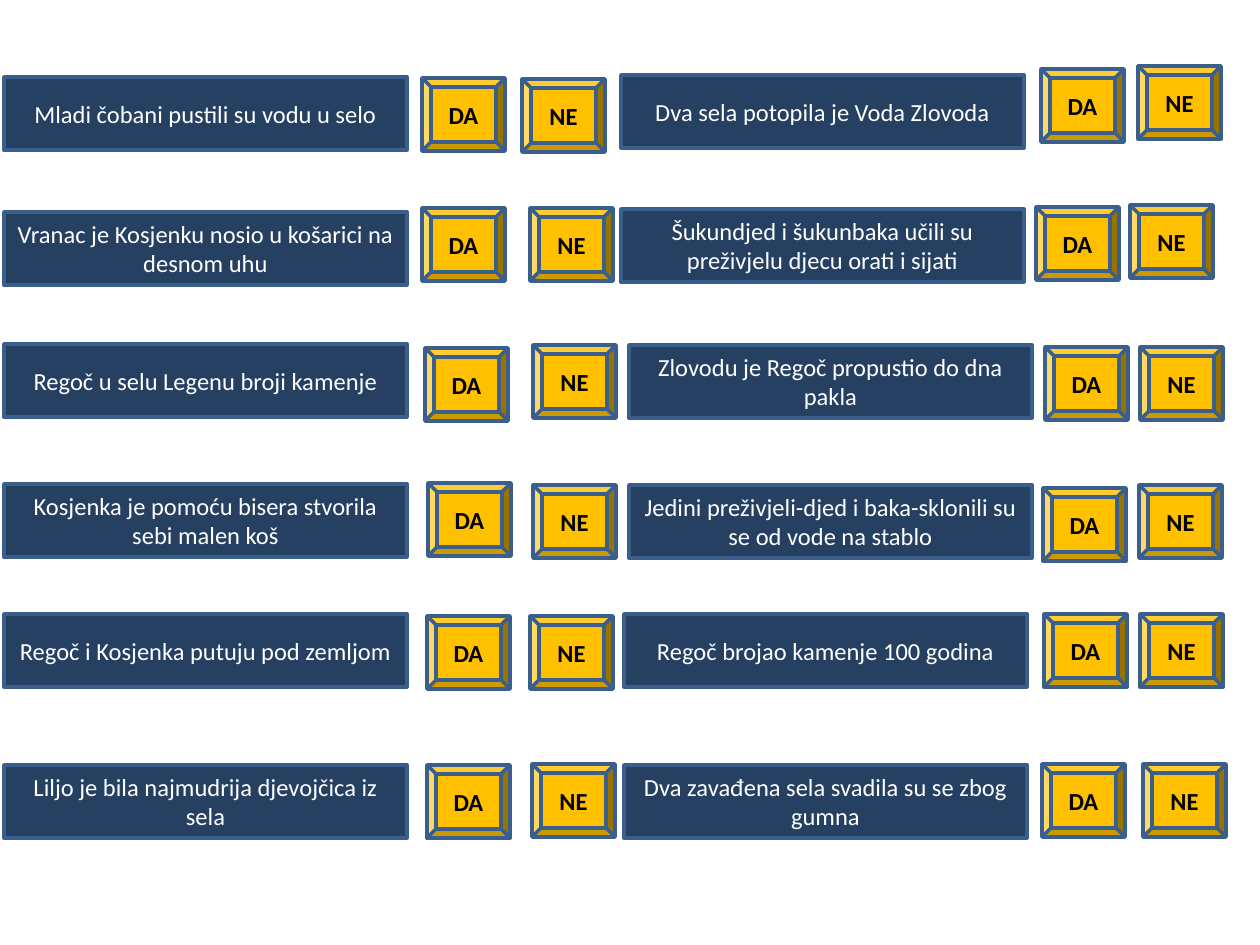
from pptx import Presentation
from pptx.dml.color import RGBColor
from pptx.enum.shapes import MSO_SHAPE
from pptx.enum.text import MSO_ANCHOR, PP_ALIGN
from pptx.util import Pt

RECTANGLE, BEVEL = MSO_SHAPE.RECTANGLE, MSO_SHAPE.BEVEL
MIDDLE, CENTER = MSO_ANCHOR.MIDDLE, PP_ALIGN.CENTER
SCALE = 914400 / 126
STATEMENT_WIDTH, BUTTON_WIDTH, HEIGHT = 403, 83, 73
NAVY, GOLD, OUTLINE, WHITE, BLACK = "254061", "FFC000", "3A5F8C", "FFFFFF", "000000"

# Each entry: left, top, statement, offset of DA, offset of NE.
STATEMENTS = [
    (4, 77, "Mladi čobani pustili su vodu u selo", (418, 1), (518, 2)),
    (4, 212, "Vranac je Kosjenku nosio u košarici na desnom uhu", (418, -4), (526, -4)),
    (4, 344, "Regoč u selu Legenu broji kamenje", (421, 4), (529, 1)),
    (4, 484, "Kosjenka je pomoću bisera stvorila sebi malen koš", (424, -1), (529, 1)),
    (4, 614, "Regoč i Kosjenka putuju pod zemljom", (423, 2), (526, 2)),
    (4, 765, "Liljo je bila najmudrija djevojčica iz sela", (423, 0), (528, -1)),
    (621, 75, "Dva sela potopila je Voda Zlovoda", (420, -6), (517, -9)),
    (621, 209, "Šukundjed i šukunbaka učili su preživjelu djecu orati i sijati",
     (415, -2), (509, -4)),
    (629, 345, "Zlovodu je Regoč propustio do dna pakla", (416, 2), (511, 2)),
    (629, 485, "Jedini preživjeli-djed i baka-sklonili su se od vode na stablo",
     (414, 3), (510, 0)),
    (624, 614, "Regoč brojao kamenje 100 godina", (420, 0), (516, 0)),
    (624, 765, "Dva zavađena sela svadila su se zbog gumna", (418, -1), (519, -1)),
]


def px(length):
    """Turn pixels into EMU."""
    return round(length * SCALE)


def color(value):
    """Turn a hex string into a colour."""
    return RGBColor.from_string(value)


def add_label(page, kind, left, top, width, text, fill, ink, bold=False):
    """Draw one outlined shape with centred text."""
    box = page.shapes.add_shape(kind, px(left), px(top), px(width), px(HEIGHT))
    box.shadow.inherit = False
    box.fill.solid()
    box.fill.fore_color.rgb = color(fill)
    box.line.color.rgb = color(OUTLINE)
    box.line.width = Pt(2)
    frame = box.text_frame
    frame.word_wrap = True
    frame.vertical_anchor = MIDDLE
    para = frame.paragraphs[0]
    para.alignment = CENTER
    span = para.add_run()
    span.text = text
    span.font.name = "Calibri"
    span.font.size = Pt(14)
    span.font.bold = bold
    span.font.color.rgb = color(ink)


def add_question(page, left, top, statement, yes_offset, no_offset):
    """Place a statement and its two answer buttons."""
    add_label(page, RECTANGLE, left, top, STATEMENT_WIDTH, statement, NAVY, WHITE)
    for answer, (across, down) in (("DA", yes_offset), ("NE", no_offset)):
        add_label(page, BEVEL, left + across, top + down, BUTTON_WIDTH,
                  answer, GOLD, BLACK, bold=True)


def main():
    """Build the quiz slide and save it."""
    deck = Presentation()
    deck.slide_width, deck.slide_height = px(1260), px(945)
    page = deck.slides.add_slide(deck.slide_layouts[6])
    for question in STATEMENTS:
        add_question(page, *question)
    deck.save("out.pptx")


if __name__ == "__main__":
    main()
